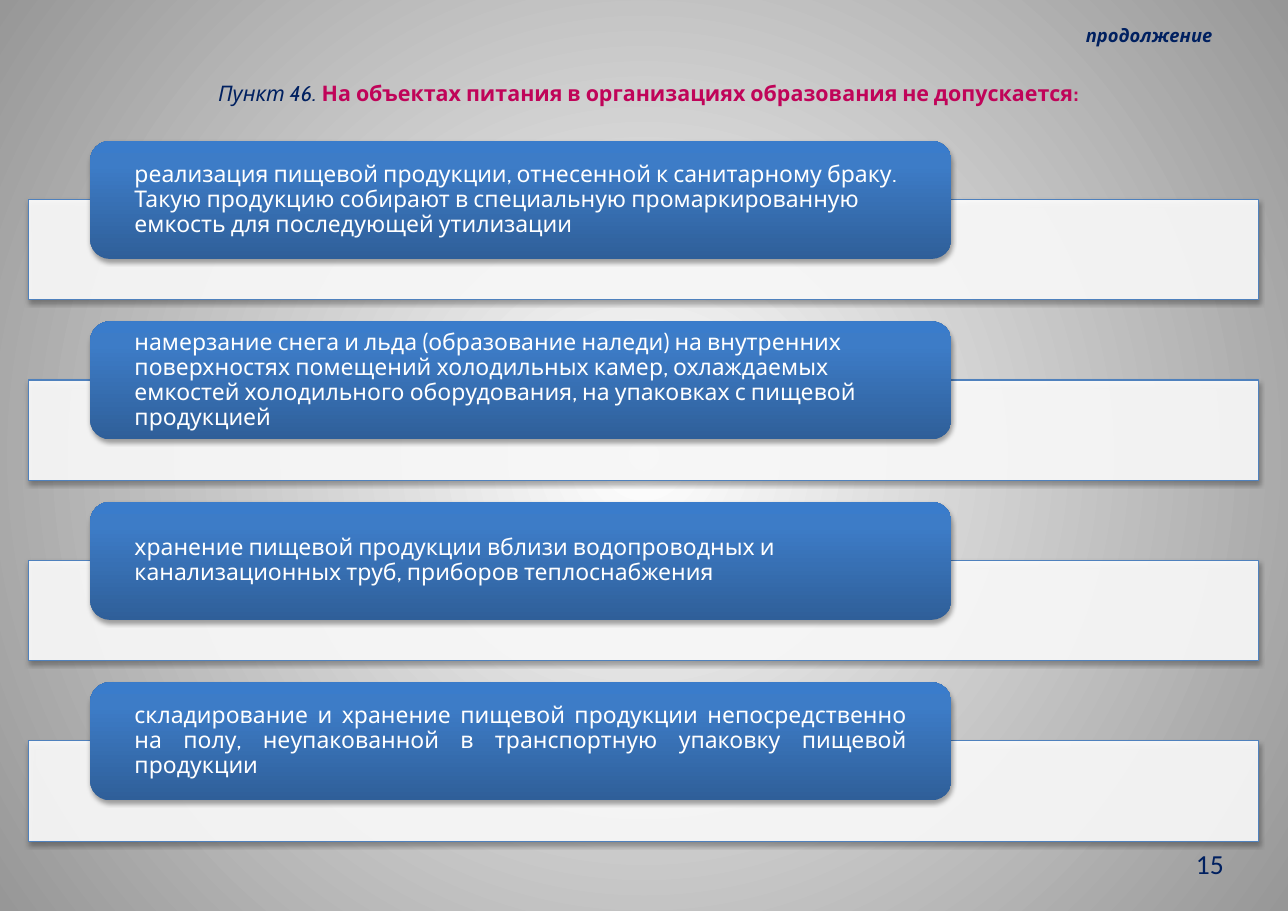
from lxml.etree import SubElement
from pptx import Presentation
from pptx.dml.color import RGBColor
from pptx.enum.shapes import MSO_SHAPE
from pptx.enum.text import MSO_ANCHOR, PP_ALIGN
from pptx.oxml.ns import qn
from pptx.util import Cm, Pt

HEX = {
    "white": "FFFFFF", "gray": "979797", "black": "000000",
    "navy": "002060", "pink": "C00459", "line": "4F81BD",
    "deep": "2F5F99", "mid": "3D7CC7", "light": "3A7CCB",
}
RULES = [
    ("реализация пищевой продукции, отнесенной к санитарному браку. Такую "
     "продукцию собирают в специальную промаркированную емкость для "
     "последующей утилизации", PP_ALIGN.LEFT),
    ("намерзание снега и льда (образование наледи) на внутренних поверхностях "
     "помещений холодильных камер, охлаждаемых емкостей холодильного "
     "оборудования, на упаковках с пищевой продукцией", PP_ALIGN.LEFT),
    ("хранение пищевой продукции вблизи водопроводных и канализационных труб, "
     "приборов теплоснабжения", PP_ALIGN.LEFT),
    ("складирование и хранение пищевой продукции непосредственно на полу, "
     "неупакованной в транспортную упаковку пищевой продукции",
     PP_ALIGN.JUSTIFY),
]
TOP, STEP = 3.25, 4.16


def color(name):
    return RGBColor.from_string(HEX[name])


def tint(parent, name, alpha):
    """Add a colour with an opacity in percent."""
    node = SubElement(parent, qn("a:srgbClr"), val=HEX[name])
    SubElement(node, qn("a:alpha"), val=str(alpha * 1000))


def blend(parent, stops):
    """Turn the solid fill of parent into a gradient and return it."""
    solid = parent.find(qn("a:solidFill"))
    grad = parent.makeelement(qn("a:gradFill"), {"rotWithShape": "1"})
    parent.replace(solid, grad)
    items = SubElement(grad, qn("a:gsLst"))
    for place, name in stops:
        stop = SubElement(items, qn("a:gs"), pos=str(place * 1000))
        SubElement(stop, qn("a:srgbClr"), val=HEX[name])
    return grad


def paint_back(slide):
    slide.background.fill.solid()
    back = slide.element.find(".//" + qn("p:bgPr"))
    grad = blend(back, [(0, "white"), (100, "gray")])
    path = SubElement(grad, qn("a:path"), path="circle")
    SubElement(path, qn("a:fillToRect"),
               {side: "50000" for side in "ltrb"})


def add_block(slide, kind, left, top, width, height):
    """Add a white shape with a soft shadow below it."""
    shape = slide.shapes.add_shape(
        kind, Cm(left), Cm(top), Cm(width), Cm(height))
    shape.fill.solid()
    shape.fill.fore_color.rgb = color("white")
    shape.shadow.inherit = False
    glow = SubElement(
        shape.element.spPr.find(qn("a:effectLst")), qn("a:outerShdw"),
        blurRad=str(Pt(3.1)), dist=str(Pt(1.8)), dir="5400000",
        rotWithShape="0")
    tint(glow, "black", 35)
    return shape


def add_bar(slide, top):
    bar = add_block(slide, MSO_SHAPE.RECTANGLE, 0.66, top, 28.37, 2.31)
    solid = bar.element.spPr.find(qn("a:solidFill"))
    solid.clear()
    tint(solid, "white", 90)
    bar.line.color.rgb = color("line")
    bar.line.width = Pt(0.75)


def add_tile(slide, top, text, align):
    tile = add_block(slide, MSO_SHAPE.ROUNDED_RECTANGLE,
                     2.08, top, 19.86, 2.72)
    grad = blend(tile.element.spPr, [(0, "deep"), (80, "mid"), (100, "light")])
    SubElement(grad, qn("a:lin"), ang="16200000", scaled="0")
    tile.line.fill.background()
    frame = tile.text_frame
    frame.word_wrap = True
    frame.vertical_anchor = MSO_ANCHOR.MIDDLE
    frame.margin_left = frame.margin_right = Cm(0.89)
    frame.margin_top = frame.margin_bottom = 0
    para = frame.paragraphs[0]
    para.text = text
    para.alignment = align
    para.line_spacing = 0.9
    set_font(para.font, 15, "white")


def set_font(font, size, name, face="Cabin"):
    font.size = Pt(size)
    font.name = face
    font.color.rgb = color(name)


def add_label(slide, left, top, width, height, align, wrap=True):
    """Add an empty text box and return its frame and first paragraph."""
    box = slide.shapes.add_textbox(Cm(left), Cm(top), Cm(width), Cm(height))
    frame = box.text_frame
    frame.word_wrap = wrap
    para = frame.paragraphs[0]
    para.alignment = align
    return frame, para


def add_page(slide):
    frame, para = add_label(slide, 21.39, 19.53, 6.83, 0.76, PP_ALIGN.RIGHT)
    frame.margin_left = frame.margin_right = 0
    frame.margin_top = frame.margin_bottom = 0
    para.text = "15"
    set_font(para.font, 18, "navy", "Calibri")


def add_title(slide):
    para = add_label(slide, 0.66, 1.63, 28.58, 0.94, PP_ALIGN.CENTER)[1]
    para.line_spacing = 1.15
    point = para.add_run()
    point.text = "Пункт 46. "
    set_font(point.font, 14, "navy")
    point.font.italic = True
    claim = para.add_run()
    claim.text = ("На объектах питания в организациях образования "
                  "не допускается:")
    set_font(claim.font, 14, "pink")
    claim.font.bold = True


def add_note(slide):
    para = add_label(slide, 24.79, 0.43, 3.58, 0.76, PP_ALIGN.LEFT, False)[1]
    para.text = "продолжение"
    set_font(para.font, 12, "navy")
    para.font.bold = para.font.italic = True


def main():
    deck = Presentation()
    deck.slide_width, deck.slide_height = Cm(29.7), Cm(21)
    slide = deck.slides.add_slide(deck.slide_layouts[6])
    paint_back(slide)
    add_page(slide)
    for row, (text, align) in enumerate(RULES):
        top = TOP + row * STEP
        add_bar(slide, top + 1.35)
        add_tile(slide, top, text, align)
    add_title(slide)
    add_note(slide)
    deck.save("out.pptx")


if __name__ == "__main__":
    main()
